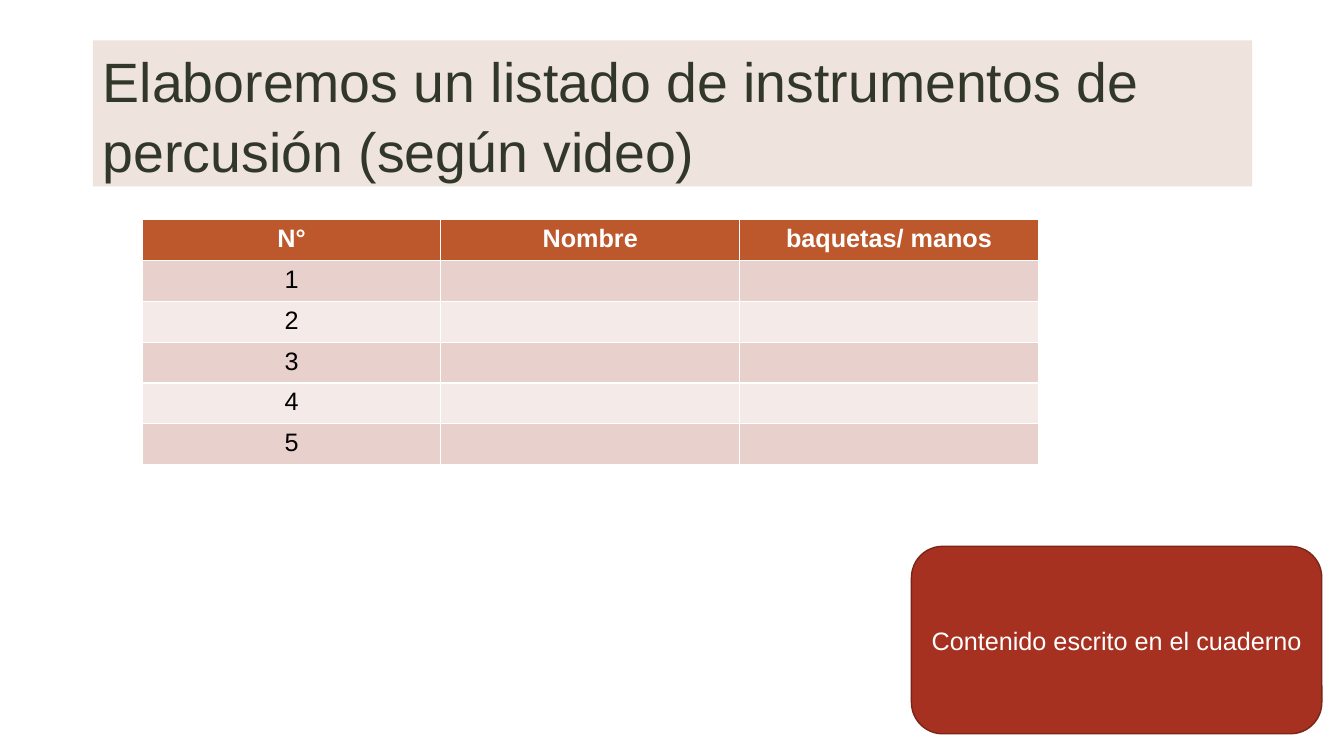
from lxml import etree
from pptx import Presentation
from pptx.dml.color import RGBColor
from pptx.enum import shapes, text
from pptx.oxml import ns
from pptx.util import Inches, Pt

WHITE = RGBColor(0xFF, 0xFF, 0xFF)
BLACK = RGBColor(0, 0, 0)
SAND = RGBColor(0xEB, 0xDC, 0xD5)
OLIVE = RGBColor(0x31, 0x38, 0x29)
BRICK = RGBColor(0xA6, 0x31, 0x21)
MAROON = RGBColor(0x7B, 0x24, 0x18)
RUST = RGBColor(0xBD, 0x58, 0x2C)
BANDS = RGBColor(0xE8, 0xD1, 0xCD), RGBColor(0xF4, 0xEA, 0xE8)


class Page:
    face = "Arial"

    def __init__(self, deck):
        self.slide = deck.slides.add_slide(deck.slide_layouts[5])

    def label(self, frame, words, size, color, bold=False, align=text.PP_ALIGN.CENTER):
        par = frame.paragraphs[0]
        par.text = words
        par.alignment = align
        font = par.font
        font.name, font.size, font.bold = self.face, Pt(size), bold
        font.color.rgb = color
        return par

    def paint(self, shape, color, alpha=100):
        shape.fill.solid()
        shape.fill.fore_color.rgb = color
        if alpha < 100:
            tint = shape.element.spPr.find(".//" + ns.qn("a:srgbClr"))
            etree.SubElement(tint, ns.qn("a:alpha"), val=str(alpha * 1000))

    def title(self, words, box):
        shape = self.slide.shapes.title
        shape.left, shape.top, shape.width, shape.height = map(Inches, box)
        self.paint(shape, SAND, 80)
        frame = shape.text_frame
        frame.word_wrap = True
        frame.auto_size = text.MSO_AUTO_SIZE.NONE
        frame.vertical_anchor = text.MSO_ANCHOR.MIDDLE
        par = self.label(frame, words, 39.6, OLIVE, align=text.PP_ALIGN.LEFT)
        par.line_spacing = 1.05

    def table(self, heads, count, box):
        grid = self.slide.shapes.add_table(count + 1, len(heads), *map(Inches, box)).table
        for col, head in enumerate(heads):
            cell = grid.cell(0, col)
            self.paint(cell, RUST)
            self.label(cell.text_frame, head, 18, WHITE, bold=True)
            for row in range(1, count + 1):
                cell = grid.cell(row, col)
                self.paint(cell, BANDS[(row - 1) % 2])
                self.label(cell.text_frame, "" if col else str(row), 18, BLACK)

    def card(self, words, box):
        kind = shapes.MSO_SHAPE.ROUNDED_RECTANGLE
        shape = self.slide.shapes.add_shape(kind, *map(Inches, box))
        shape.shadow.inherit = False
        self.paint(shape, BRICK)
        shape.line.color.rgb = MAROON
        shape.line.width = Pt(1)
        frame = shape.text_frame
        frame.word_wrap = True
        frame.vertical_anchor = text.MSO_ANCHOR.MIDDLE
        self.label(frame, words, 18, WHITE)


def main():
    deck = Presentation()
    deck.slide_width, deck.slide_height = Inches(13.33), Inches(7.5)
    page = Page(deck)
    # Heading
    page.title("Elaboremos un listado de instrumentos de percusión (según video)",
               (0.92, 0.4, 11.5, 1.45))
    # Reminder card
    page.card("Contenido escrito en el cuaderno", (9.04, 5.42, 4.07, 1.86))
    # Instrument list to fill in
    page.table(("N°", "Nombre", "baquetas/ manos"), 5, (1.41, 2.18, 8.89, 2.43))
    deck.save("out.pptx")


if __name__ == "__main__":
    main()
